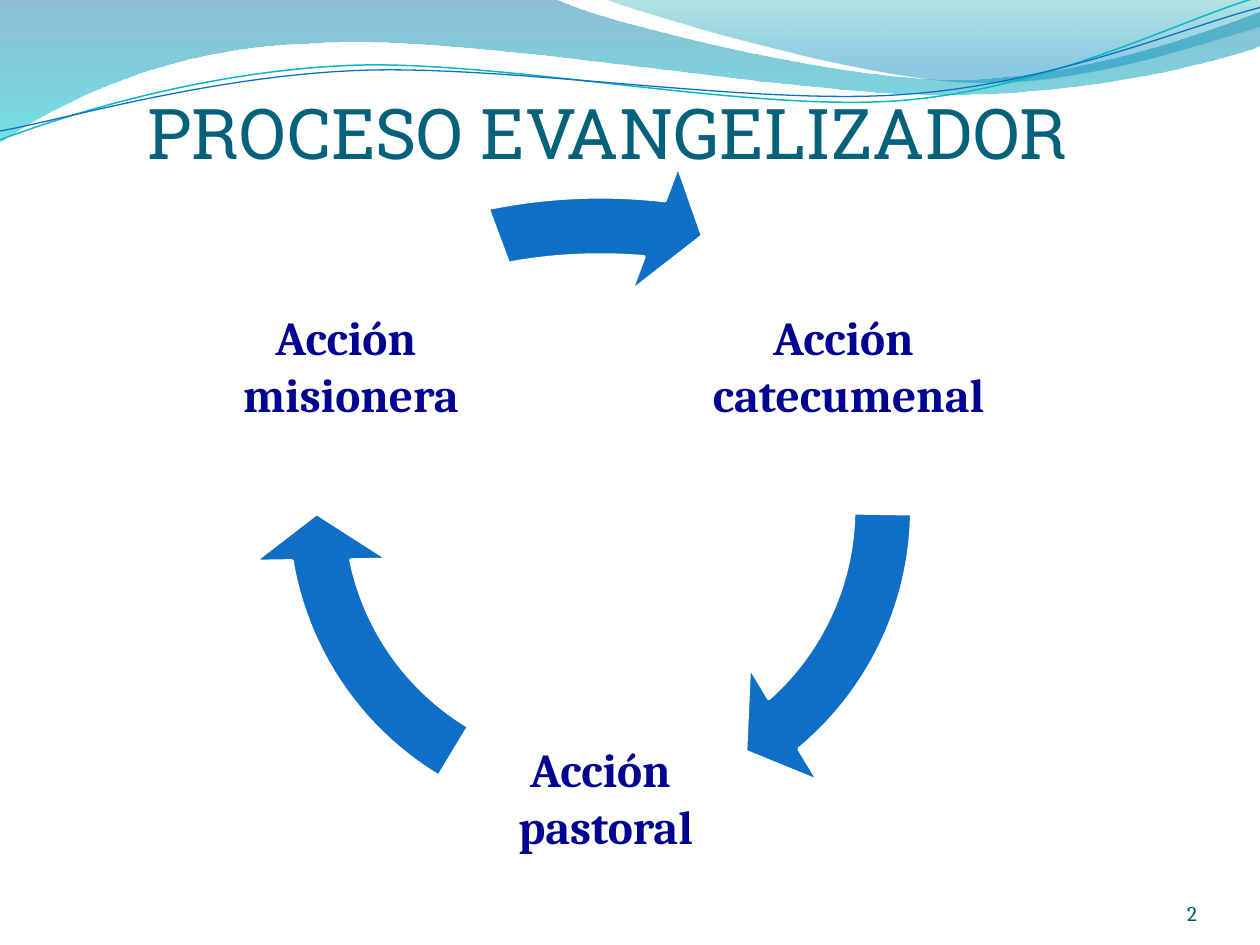
from dataclasses import dataclass

from lxml.etree import Element, SubElement
from pptx import Presentation
from pptx.dml.color import RGBColor
from pptx.enum.shapes import MSO_SHAPE
from pptx.enum.text import MSO_ANCHOR, PP_ALIGN
from pptx.oxml.ns import qn
from pptx.util import Inches, Pt

COLORS = {
    "blue": "0F6FC6", "teal": "0AB8BF", "navy": "030391", "title": "04617B",
    "number": "045D75", "white": "FFFFFF", "deep": "0074A1", "cyan": "00C6CF",
    "green": "00A1A9", "sky": "008BBF",
}
ARROW_TOP, ARROW_HEIGHT = 1.26, 5.56
LABEL_SIZE = 2.35


@dataclass
class Stop:
    position: float
    color: str
    alpha: int


@dataclass
class Wave:
    points: list
    stops: tuple = ()
    line: str = ""
    width: float = 0


@dataclass
class Stage:
    lines: tuple
    left: float
    top: float
    arrow_left: float
    arrow_width: float
    end: float
    start: float


WAVES = [
    Wave([(0, 0), (4.4, -0.01), (4.76, 0.17, 6.64, 0.63, 7.58, 0.63),
          (8.53, 0.63, 9.58, 0.26, 10, 0.09), (10.01, 0.36),
          (9.83, 0.44, 8.7, 0.76, 7.46, 0.75), (6.22, 0.75, 3.82, 0.28, 2.57, 0.34),
          (1.29, 0.36, 0.46, 0.83, -0.01, 1.13)],
         stops=(Stop(0, "deep", 45), Stop(1, "cyan", 55))),
    Wave([(4.79, -0.01), (5.09, 0.11, 6.82, 0.62, 7.69, 0.65),
          (8.56, 0.69, 9.61, 0.32, 10, 0.21), (10, 0)],
         stops=(Stop(0, "green", 30), Stop(0.8, "sky", 45))),
    Wave([(0, 1.11), (0.48, 0.93, 1.58, 0.57, 2.77, 0.52),
          (3.95, 0.47, 5.93, 0.89, 7.13, 0.8), (8.33, 0.71, 9.38, 0.15, 9.98, -0.02)],
         line="teal", width=0.85),
    Wave([(0, 1.04), (0.47, 0.96, 1.64, 0.61, 2.83, 0.56),
          (4.03, 0.51, 5.97, 0.84, 7.17, 0.75), (8.36, 0.67, 9.41, 0.21, 10, 0.06)],
         line="blue", width=0.75),
]
STAGES = [
    Stage(("Acción ", "catecumenal"), 5.56, 1.72, 1.98, 5.56, 29.622, 0.528),
    Stage(("Acción", " pastoral"), 3.59, 5.15, 1.98, 5.56, 101.707, 72.613),
    Stage(("Acción ", "misionera"), 1.61, 1.72, 1.14, 7.25, 168.552, 149.684),
]
LABEL = {"size": Pt(27), "name": "Cambria", "bold": True}
TITLE = {"size": Pt(40), "name": "Roboto Slab"}
NUMBER = {"size": Pt(12), "name": "Cambria"}


def rgb(name: str) -> RGBColor:
    return RGBColor.from_string(COLORS[name])


def bend_segments(sp, points: list) -> None:
    segments = list(sp._element.spPr.iter(qn("a:lnTo")))
    for seg, pt in zip(segments, points[1:]):
        if len(pt) == 2:
            continue
        seg.tag = qn("a:cubicBezTo")
        for i in (0, 1):
            x, y = map(Inches, pt[2 * i:2 * i + 2])
            seg.insert(i, Element(qn("a:pt"), x=str(x - sp.left), y=str(y - sp.top)))


def add_wave(s, wave: Wave) -> None:
    first, *rest = [tuple(map(Inches, pt[-2:])) for pt in wave.points]
    fb = s.shapes.build_freeform(*first)
    fb.add_line_segments(rest, close=bool(wave.stops))
    sp = fb.convert_to_shape()
    bend_segments(sp, wave.points)
    sp.shadow.inherit = False
    if wave.line:
        sp.fill.background()
        sp.line.color.rgb = rgb(wave.line)
        sp.line.width = Pt(wave.width)
        return
    sp.line.fill.background()
    sp.fill.gradient()
    sp.fill.gradient_angle = 270
    for gs, stop in zip(sp.fill.gradient_stops, wave.stops):
        gs.position = stop.position
        gs.color.rgb = rgb(stop.color)
    for clr, stop in zip(sp._element.spPr.iter(qn("a:srgbClr")), wave.stops):
        SubElement(clr, qn("a:alpha"), val=str(stop.alpha * 1000))


def add_text(s, box: tuple, lines: tuple, font: dict, color: str, anchor: MSO_ANCHOR,
             align: PP_ALIGN, insets: tuple = (0, 0, 0, 0)) -> None:
    tf = s.shapes.add_textbox(*map(Inches, box)).text_frame
    left, top, right, bottom = map(Inches, insets)
    frame = {"word_wrap": True, "vertical_anchor": anchor, "margin_left": left,
             "margin_top": top, "margin_right": right, "margin_bottom": bottom}
    for key, value in frame.items():
        setattr(tf, key, value)
    for i, line in enumerate(lines):
        p = tf.add_paragraph() if i else tf.paragraphs[0]
        p.alignment = align
        r = p.add_run()
        r.text = line
        for key, value in font.items():
            setattr(r.font, key, value)
        r.font.color.rgb = rgb(color)


def add_stage(s, stage: Stage) -> None:
    add_text(s, (stage.left, stage.top, LABEL_SIZE, LABEL_SIZE), stage.lines, LABEL, "navy",
             MSO_ANCHOR.MIDDLE, PP_ALIGN.CENTER, (0.04,) * 4)
    box = (stage.arrow_left, ARROW_TOP, stage.arrow_width, ARROW_HEIGHT)
    sp = s.shapes.add_shape(MSO_SHAPE.CIRCULAR_ARROW, *map(Inches, box))
    for i, value in enumerate((0.083, 5.765, stage.end, stage.start, 0.096)):
        sp.adjustments[i] = value
    sp.shadow.inherit = False
    sp.fill.solid()
    sp.fill.fore_color.rgb = rgb("blue")
    sp.line.color.rgb = rgb("white")
    sp.line.width = Pt(2)


def main() -> None:
    prs = Presentation()
    prs.slide_width, prs.slide_height = Inches(10), Inches(7.5)
    s = prs.slides.add_slide(prs.slide_layouts[6])
    for wave in WAVES:
        add_wave(s, wave)
    add_text(s, (8.67, 6.95, 0.83, 0.4), ("2",), NUMBER, "number",
             MSO_ANCHOR.BOTTOM, PP_ALIGN.RIGHT)
    add_text(s, (1.17, 0.13, 8.5, 1.25), ("PROCESO EVANGELIZADOR",), TITLE, "title",
             MSO_ANCHOR.BOTTOM, PP_ALIGN.LEFT, (0, 0.05, 0, 0))
    for stage in STAGES:
        add_stage(s, stage)
    prs.save("out.pptx")


if __name__ == "__main__":
    main()
